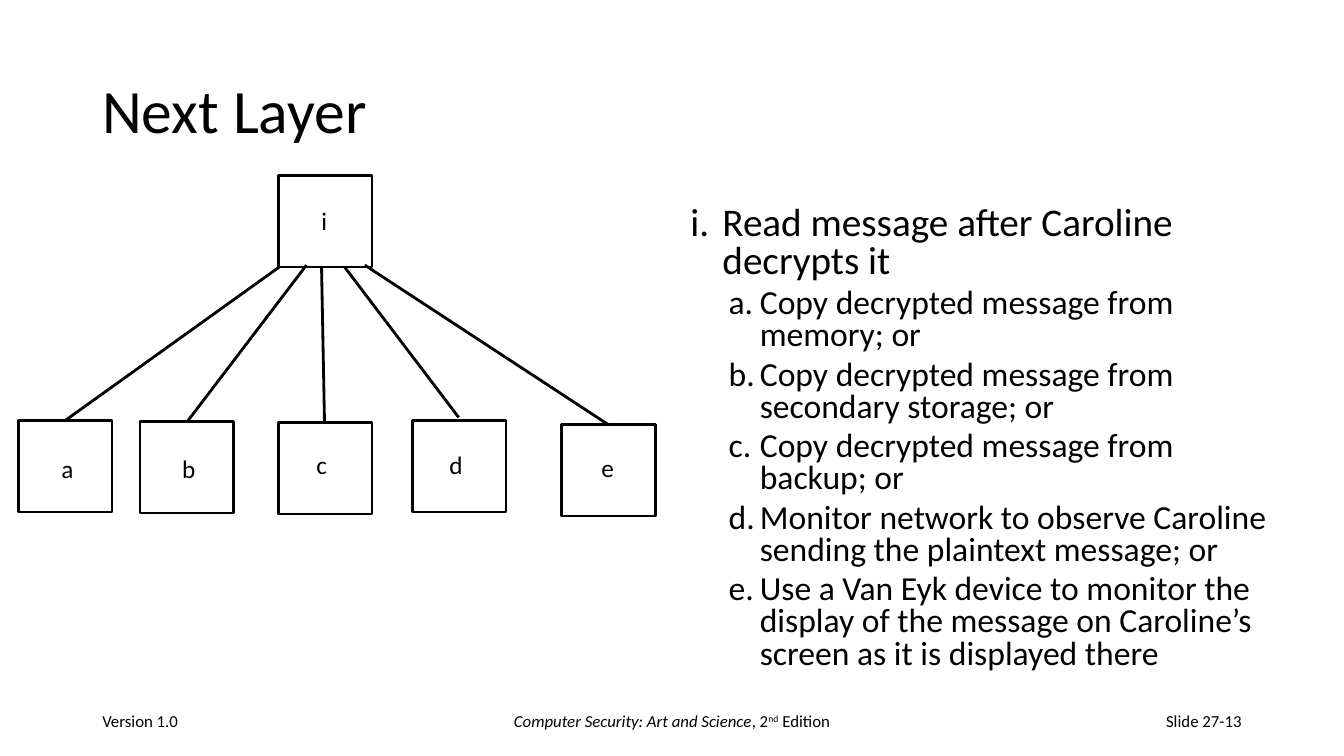
from dataclasses import dataclass, field

from lxml.etree import SubElement as Sub
from pptx import Presentation
from pptx.dml.color import RGBColor as Rgb
from pptx.enum.shapes import MSO_CONNECTOR as Conn, MSO_SHAPE as Kind
from pptx.enum.text import MSO_ANCHOR as Anchor, PP_ALIGN as Align
from pptx.oxml.ns import qn
from pptx.util import Pt

INK = "000000"
FACE = "Calibri"
SIDE, TALL = 67, 65.5


@dataclass
class Node:
    name: str
    left: float
    top: float
    text_x: float
    text_y: float
    text_w: float


@dataclass
class Edge:
    x1: float
    y1: float
    x2: float
    y2: float


@dataclass
class Run:
    text: str
    form: dict = field(default_factory=dict)
    lift: int = 0


@dataclass
class Note:
    left: float
    width: float
    align: Align
    runs: list[Run]


NODES = [
    Node("i", 198.7, 125.3, 222.5, 143.3, 18.7),
    Node("a", 13, 300.2, 36.7, 320.4, 23.8),
    Node("b", 100.1, 301, 123.1, 320.4, 24.5),
    Node("c", 198.7, 301.7, 218.9, 317.5, 22.3),
    Node("d", 294.5, 300.2, 313.9, 317.5, 24.5),
    Node("e", 401, 303.1, 422.6, 319.7, 24.5),
]
EDGES = [
    Edge(199.4, 190.8, 46.8, 300.2),
    Edge(218.9, 189.4, 133.9, 301),
    Edge(229.7, 191.5, 231.8, 301.7),
    Edge(246.2, 190.8, 327.6, 298.1),
    Edge(260.6, 189.4, 434.2, 303.1),
]
GOAL = "Read message after Caroline decrypts it"
STEPS = [
    "Copy decrypted message from memory; or",
    "Copy decrypted message from secondary storage; or",
    "Copy decrypted message from backup; or",
    "Monitor network to observe Caroline sending the plaintext message; or",
    "Use a Van Eyk device to monitor the display of the message on "
    "Caroline’s screen as it is displayed there",
]
NOTES = [
    Note(66, 216, Align.LEFT, [Run("Version 1.0")]),
    Note(318, 324, Align.CENTER, [
        Run("Computer Security: Art and Science", {"italic": True}),
        Run(", 2"), Run("nd", lift=30000), Run(" Edition"),
    ]),
    Note(678, 216, Align.RIGHT, [Run("Slide 27-13")]),
]


def hue(code: str) -> Rgb:
    return Rgb.from_string(code)


def apply(item, form: dict) -> None:
    for key, value in form.items():
        setattr(item, key, value)


def write(para, run: Run, size: float) -> None:
    part = para.add_run()
    part.text = run.text
    apply(part.font, {"name": FACE, "size": Pt(size), **run.form})
    part.font.color.rgb = hue(INK)
    if run.lift:
        part.font._element.set("baseline", str(run.lift))


def add_box(slide, left: float, top: float, width: float, high: float, form: dict):
    box = slide.shapes.add_textbox(Pt(left), Pt(top), Pt(width), Pt(high))
    apply(box.text_frame, {"word_wrap": True, **form})
    return box.text_frame


def add_title(slide) -> None:
    frame = add_box(slide, 66, 28.8, 828, 104.4, {"vertical_anchor": Anchor.MIDDLE})
    para = frame.paragraphs[0]
    para.line_spacing = 0.9
    write(para, Run("Next Layer"), 44)


def add_item(para, text: str, size: float, mark: str, left: float, hang: float,
             form: dict) -> None:
    apply(para, {"line_spacing": 0.8, **form})
    props = para._p.get_or_add_pPr()
    props.set("marL", str(Pt(left)))
    props.set("indent", str(-Pt(hang)))
    Sub(props, qn("a:buFont")).set("typeface", FACE)
    Sub(props, qn("a:buAutoNum")).set("type", mark)
    write(para, Run(text), size)


def add_list(slide) -> None:
    frame = add_box(slide, 486, 144, 437, 342.7, {})
    add_item(frame.paragraphs[0], GOAL, 28, "romanLcPeriod", 23, 23, {})
    for step in STEPS:
        add_item(frame.add_paragraph(), step, 24, "alphaLcPeriod", 49.7, 22.3,
                 {"level": 1, "space_before": Pt(5)})


def add_note(slide, note: Note) -> None:
    frame = add_box(slide, note.left, 500.4, note.width, 28.8,
                    {"vertical_anchor": Anchor.MIDDLE})
    para = frame.paragraphs[0]
    para.alignment = note.align
    for run in note.runs:
        write(para, run, 12)


def ink_line(line) -> None:
    line.color.rgb = hue(INK)
    line.width = Pt(2)


def add_node(slide, node: Node) -> None:
    box = slide.shapes.add_shape(Kind.RECTANGLE, Pt(node.left), Pt(node.top),
                                 Pt(SIDE), Pt(TALL))
    box.shadow.inherit = False
    box.fill.background()
    ink_line(box.line)
    frame = add_box(slide, node.text_x, node.text_y, node.text_w, 29,
                    {"word_wrap": False})
    write(frame.paragraphs[0], Run(node.name), 18)


def add_edge(slide, edge: Edge) -> None:
    link = slide.shapes.add_connector(Conn.STRAIGHT, Pt(edge.x1), Pt(edge.y1),
                                      Pt(edge.x2), Pt(edge.y2))
    ink_line(link.line)
    Sub(link._element.spPr, qn("a:effectLst"))


def main() -> None:
    deck = Presentation()
    apply(deck, {"slide_width": Pt(960), "slide_height": Pt(540)})
    slide = deck.slides.add_slide(deck.slide_layouts[6])
    add_title(slide)
    add_list(slide)
    for note in NOTES:
        add_note(slide, note)
    for edge in EDGES:
        add_edge(slide, edge)
    for node in NODES:
        add_node(slide, node)
    deck.save("out.pptx")


if __name__ == "__main__":
    main()
